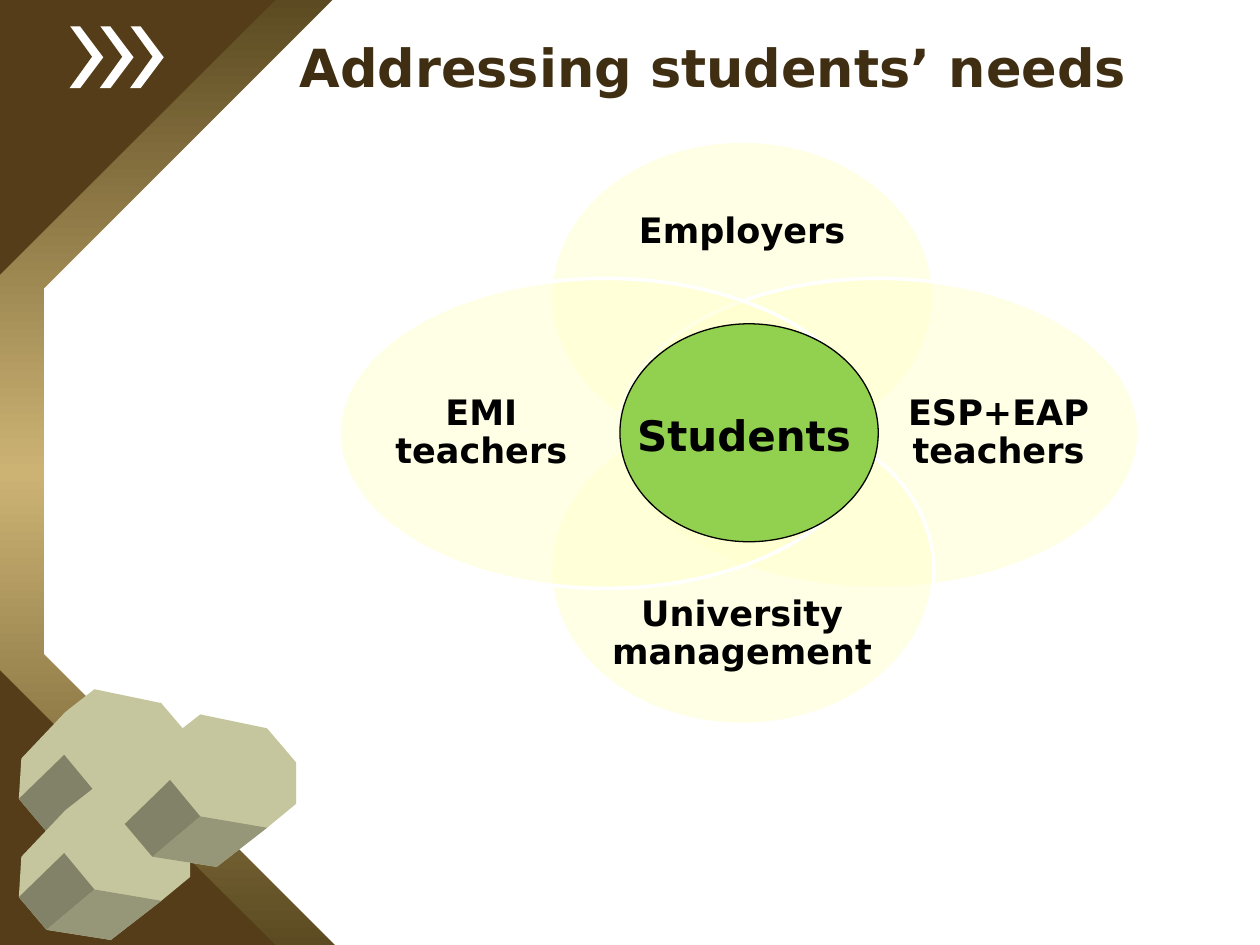
import copy

import pptx
import pptx.dml.color
import pptx.enum.shapes
import pptx.enum.text
import pptx.oxml
import pptx.oxml.ns
import pptx.util

Inches = pptx.util.Inches
Pt = pptx.util.Pt
SHAPE = pptx.enum.shapes.MSO_SHAPE
ALIGN = pptx.enum.text.PP_ALIGN
ANCHOR = pptx.enum.text.MSO_ANCHOR

FONT = "DejaVu Sans"
COLORS = {
    "brown": "543D18", "olive": "5C4B22", "gold": "CCB374", "title": "3F2E12",
    "white": "FFFFFF", "black": "000000", "cream": "FFFFCC", "green": "92D050",
    "stone": "C6C69E", "stone_side": "828268", "stone_base": "969678",
}

TITLE = ("Addressing students’ needs", (2.28, 0.19, 7.55, 0.67))
CENTRE = ("Students", (4.92, 2.57, 2.05, 1.73), (4.92, 3.2, 1.97, 0.5))
# label, ellipse box, text box
GROUPS = [
    ("Employers", (4.37, 1.12, 3.04, 2.46), (4.72, 1.45, 2.34, 0.78)),
    ("ESP+EAP teachers", (4.9, 2.21, 4.14, 2.46), (7.13, 2.49, 1.59, 1.89)),
    ("University management", (4.37, 3.29, 3.04, 2.46), (4.72, 4.64, 2.34, 0.78)),
    ("EMI teachers", (2.69, 2.21, 4.22, 2.46), (3.01, 2.49, 1.62, 1.89)),
]

CHEVRON_LEFTS = [0.56, 0.32, 0.08]
STONE_ORIGINS = [(0.15, 5.47), (0.15, 6.25), (0.99, 5.67)]
STONE_FACES = [
    ("stone", [(0.6, 0), (1.13, 0.11), (1.36, 0.38), (1.36, 0.71), (1.13, 0.9),
               (0.73, 1.21), (0.22, 1.13), (0, 0.87), (0.02, 0.55), (0.37, 0.18)]),
    ("stone_side", [(0.36, 0.52), (0.6, 0.81), (0.22, 1.13), (0, 0.87)]),
    ("stone_base", [(0.6, 0.81), (1.13, 0.9), (0.73, 1.21), (0.22, 1.13)]),
]


def rgb(name):
    return pptx.dml.color.RGBColor.from_string(COLORS[name])


def paint(shape, color, line=None, line_width=1.0):
    shape.shadow.inherit = False
    shape.fill.solid()
    shape.fill.fore_color.rgb = rgb(color)
    if line:
        shape.line.color.rgb = rgb(line)
        shape.line.width = Pt(line_width)
    else:
        shape.line.fill.background()


def add_preset(kind, box, color, adjustment=None, **outline):
    shape = slide.shapes.add_shape(kind, *map(Inches, box))
    if adjustment is not None:
        shape.adjustments[0] = adjustment
    paint(shape, color, **outline)
    return shape


def set_alpha(shape, percent):
    color = shape.fill._xPr.find(".//" + pptx.oxml.ns.qn("a:srgbClr"))
    alpha = pptx.oxml.parse_xml(
        f'<a:alpha {pptx.oxml.ns.nsdecls("a")} val="{percent * 1000}"/>')
    color.append(alpha)


def fill_with_band(shape, edge, middle):
    """Vertical gradient running edge, middle, edge."""
    shape.fill.gradient()
    shape.fill.gradient_angle = 90
    first, last = shape.fill.gradient_stops
    for stop, position in ((first, 0), (last, 1)):
        stop.color.rgb = rgb(edge)
        stop.position = position
    first._gs.addnext(copy.deepcopy(first._gs))
    centre = shape.fill.gradient_stops[1]
    centre.color.rgb = rgb(middle)
    centre.position = 0.5


def add_label(text, box, size, color="black", align=ALIGN.CENTER,
              anchor=ANCHOR.MIDDLE, inset=None, spacing=None):
    frame = slide.shapes.add_textbox(*map(Inches, box)).text_frame
    frame.word_wrap = True
    frame.vertical_anchor = anchor
    if inset is not None:
        frame.margin_left = frame.margin_right = Inches(inset)
        frame.margin_top = frame.margin_bottom = Inches(inset)
    paragraph = frame.paragraphs[0]
    paragraph.text = text
    paragraph.alignment = align
    paragraph.line_spacing = spacing
    paragraph.font.name = FONT
    paragraph.font.size = Pt(size)
    paragraph.font.bold = True
    paragraph.font.color.rgb = rgb(color)


def add_face(points, color):
    corners = [(Inches(x), Inches(y)) for x, y in points]
    builder = slide.shapes.build_freeform(*corners[0])
    builder.add_line_segments(corners[1:], close=True)
    paint(builder.convert_to_shape(), color)


deck = pptx.Presentation()
deck.slide_width, deck.slide_height = Inches(10), Inches(7.5)
slide = deck.slides.add_slide(deck.slide_layouts[6])
slide.background.fill.solid()
slide.background.fill.fore_color.rgb = rgb("brown")

band = add_preset(SHAPE.OCTAGON, (-0.01, 0, 7.5, 7.5), "gold", 0.293)
fill_with_band(band, "olive", "gold")
add_preset(SHAPE.RECTANGLE, (4.33, -0.01, 5.67, 7.51), "white")
add_preset(SHAPE.OCTAGON, (0.35, -0.02, 7.5, 7.52), "white", 0.308)

for left in CHEVRON_LEFTS:
    add_preset(SHAPE.CHEVRON, (left, 0.21, 0.74, 0.49), "white", 0.375)
    add_preset(SHAPE.CHEVRON, (left - 0.09, 0.19, 0.74, 0.52), "brown", 0.36)

for left, top in STONE_ORIGINS:
    for color, points in STONE_FACES:
        add_face([(left + x, top + y) for x, y in points], color)

title, title_box = TITLE
add_label(title, title_box, 30, "title", ALIGN.LEFT)

for label, ellipse_box, label_box in GROUPS:
    ellipse = add_preset(SHAPE.OVAL, ellipse_box, "cream", line="white", line_width=2)
    set_alpha(ellipse, 50)
    add_label(label, label_box, 20, inset=0, spacing=0.9)

centre_label, centre_box, centre_label_box = CENTRE
add_preset(SHAPE.OVAL, centre_box, "green", line="black", line_width=0.75)
add_label(centre_label, centre_label_box, 24, anchor=ANCHOR.TOP)

deck.save("out.pptx")
